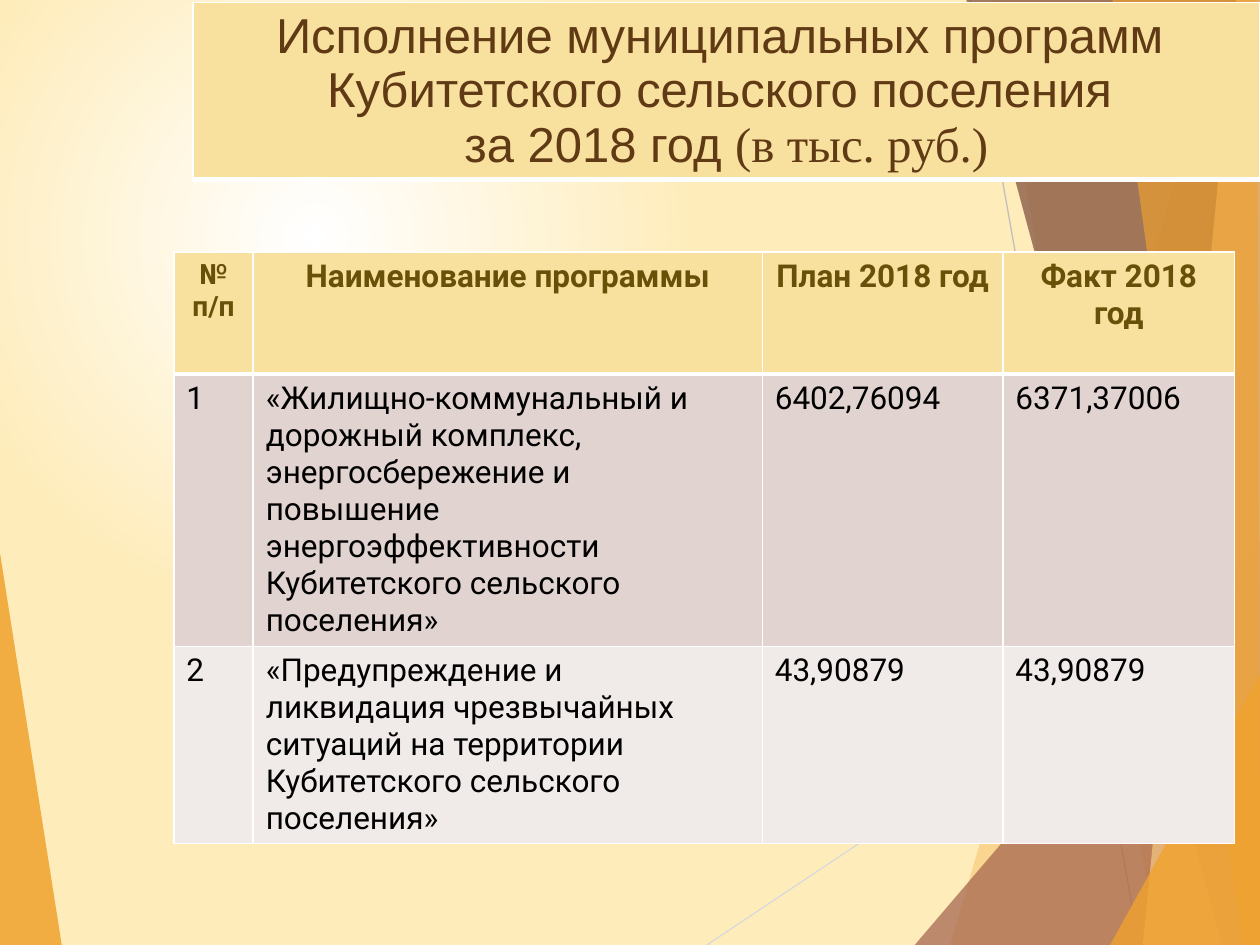
from lxml.etree import SubElement
from pptx import Presentation
from pptx.dml.color import RGBColor
from pptx.enum.shapes import MSO_CONNECTOR
from pptx.enum.text import PP_ALIGN
from pptx.oxml import parse_xml
from pptx.oxml.ns import nsdecls, qn
from pptx.util import Inches, Pt

WHITE = RGBColor(0xFF, 0xFF, 0xFF)
BLACK = RGBColor(0, 0, 0)
CREAM = RGBColor(0xFE, 0xEC, 0xBA)
ORANGE = RGBColor(0xF0, 0xA2, 0x2E)
PEACH = RGBColor(0xF6, 0xC7, 0x82)
RUST = RGBColor(0xA5, 0x64, 0x4E)
BROWN = RGBColor(0x7C, 0x4B, 0x3B)
LIGHT_GRAY = RGBColor(0xD9, 0xD9, 0xD9)
GRAY = RGBColor(0xBF, 0xBF, 0xBF)
SAND = RGBColor(0xF8, 0xE1, 0x9F)
ROSE = RGBColor(0xE1, 0xD3, 0xD0)
PALE_ROSE = RGBColor(0xF0, 0xEA, 0xE9)
HEADER_TEXT = RGBColor(0x69, 0x50, 0x08)
TITLE_TEXT = RGBColor(0x60, 0x3A, 0x14)

LEFT_FACET = ([(0, 4.39), (0.49, 7.5), (0, 7.5)], ORANGE, 85)
RIGHT_FACETS = [
    ([(9.75, 0), (7.54, 7.5), (10, 7.5), (10, 0)], ORANGE, 30),
    ([(7.88, 0), (9.19, 7.5), (10, 7.5), (10, 0)], ORANGE, 20),
    ([(7.26, 7.5), (10, 4.29), (10, 7.5)], RUST, 72),
    ([(7.67, 0), (9.7, 7.5), (10, 7.5), (10, 0)], BROWN, 70),
    ([(9.81, 0), (9.07, 7.5), (10, 7.5), (10, 0)], PEACH, 70),
    ([(8.83, 0), (9.86, 7.5), (10, 7.5), (9.98, 0)], ORANGE, 65),
    ([(8.81, 7.5), (10, 5.35), (10, 7.5)], ORANGE, 80),
]
HAIRLINES = [
    ((5.61, 7.5), (10, 4.57), LIGHT_GRAY),
    ((7.7, 0), (9.04, 7.5), GRAY),
]

TITLE_LINES = [
    [("Исполнение муниципальных программ ", "Arial")],
    [("Кубитетского сельского поселения ", "Arial")],
    [("за 2018 год ", "Arial"), ("(в тыс. руб.)", "Times New Roman")],
]
HEADERS = ["№\nп/п", "Наименование программы", "План 2018 год", "Факт 2018 год"]
PROGRAMS = [
    ["1", "«Жилищно-коммунальный и дорожный комплекс, энергосбережение и повышение "
     "энергоэффективности Кубитетского сельского поселения»", "6402,76094", "6371,37006"],
    ["2", "«Предупреждение и ликвидация чрезвычайных ситуаций на территории "
     "Кубитетского сельского поселения»", "43,90879", "43,90879"],
]


def paint_background(slide):
    fill = slide.background.fill
    fill.gradient()
    for stop, color, position in zip(fill.gradient_stops, (WHITE, CREAM), (0, 0.49)):
        stop.color.rgb = color
        stop.position = position
    gradient = slide.element.find(".//" + qn("a:gradFill"))
    gradient.replace(gradient.find(qn("a:lin")), parse_xml(
        f'<a:path {nsdecls("a")} path="circle">'
        '<a:fillToRect l="50000" t="50000" r="100000" b="100000"/></a:path>'))


def add_facet(slide, points, color, opacity):
    """Draw a polygon; opacity is in percent."""
    corners = [(Inches(x), Inches(y)) for x, y in points]
    builder = slide.shapes.build_freeform(*corners[0])
    builder.add_line_segments(corners[1:])
    shape = builder.convert_to_shape()
    shape.shadow.inherit = False
    shape.line.fill.background()
    shape.fill.solid()
    shape.fill.fore_color.rgb = color
    color_element = shape.element.spPr.find(".//" + qn("a:srgbClr"))
    SubElement(color_element, qn("a:alpha")).set("val", str(opacity * 1000))


def add_hairline(slide, start, end, color):
    line = slide.shapes.add_connector(
        MSO_CONNECTOR.STRAIGHT, *(Inches(value) for value in start + end))
    line.line.color.rgb = color
    line.line.width = Pt(0.75)
    SubElement(line.element.spPr, qn("a:effectLst"))


def add_decoration(slide):
    add_facet(slide, *LEFT_FACET)
    for hairline in HAIRLINES:
        add_hairline(slide, *hairline)
    for facet in RIGHT_FACETS:
        add_facet(slide, *facet)


def style_cell(cell, color, top=1, bottom=1):
    """Fill a cell and give it white borders; top and bottom are in points."""
    cell.fill.solid()
    cell.fill.fore_color.rgb = color
    properties = cell._tc.get_or_add_tcPr()
    borders = [("lnL", 1), ("lnR", 1), ("lnT", top), ("lnB", bottom)]
    for index, (tag, width) in enumerate(borders):
        properties.insert(index, parse_xml(
            f'<a:{tag} {nsdecls("a")} w="{Pt(width)}"><a:solidFill>'
            f'<a:srgbClr val="{WHITE}"/></a:solidFill></a:{tag}>'))


def write_lines(cell, lines, size, color, bold=False, align=PP_ALIGN.LEFT):
    """Write one paragraph per line; a line is a list of (text, font name) runs."""
    frame = cell.text_frame
    for index, runs in enumerate(lines):
        paragraph = frame.add_paragraph() if index else frame.paragraphs[0]
        paragraph.alignment = align
        for text, font_name in runs:
            run = paragraph.add_run()
            run.text = text
            run.font.name = font_name
            run.font.size = Pt(size)
            run.font.bold = bold
            run.font.color.rgb = color


def add_plain_table(slide, left, top, widths, heights):
    table = slide.shapes.add_table(
        len(heights), len(widths), Inches(left), Inches(top),
        Inches(sum(widths)), Inches(sum(heights))).table
    table.first_row = table.horz_banding = False
    for column, width in zip(table.columns, widths):
        column.width = Inches(width)
    for row, height in zip(table.rows, heights):
        row.height = Inches(height)
    return table


def add_program_table(slide, left, top, widths, heights):
    table = add_plain_table(slide, left, top, widths, heights)
    for column, header in enumerate(HEADERS):
        cell = table.cell(0, column)
        style_cell(cell, SAND, bottom=3)
        lines = [[(line, "Roboto")] for line in header.split("\n")]
        write_lines(cell, lines, 18 if column else 16, HEADER_TEXT, True, PP_ALIGN.CENTER)
    for row, (program, color) in enumerate(zip(PROGRAMS, (ROSE, PALE_ROSE)), start=1):
        for column, text in enumerate(program):
            cell = table.cell(row, column)
            style_cell(cell, color, top=3 if row == 1 else 1)
            write_lines(cell, [[(text, "Roboto")]], 18, BLACK)


def add_title(slide, left, top, width, height):
    cell = add_plain_table(slide, left, top, [width], [height]).cell(0, 0)
    style_cell(cell, SAND, bottom=3)
    write_lines(cell, TITLE_LINES, 28, TITLE_TEXT, align=PP_ALIGN.CENTER)


def main():
    presentation = Presentation()
    presentation.slide_width = Inches(10)
    presentation.slide_height = Inches(7.5)
    slide = presentation.slides.add_slide(presentation.slide_layouts[6])
    paint_background(slide)
    add_decoration(slide)
    add_program_table(slide, 1.38, 2, [0.63, 4.04, 1.91, 1.84], [0.97, 2.16, 1.56])
    add_title(slide, 1.53, 0.02, 8.47, 1.4)
    presentation.save("out.pptx")


if __name__ == "__main__":
    main()
